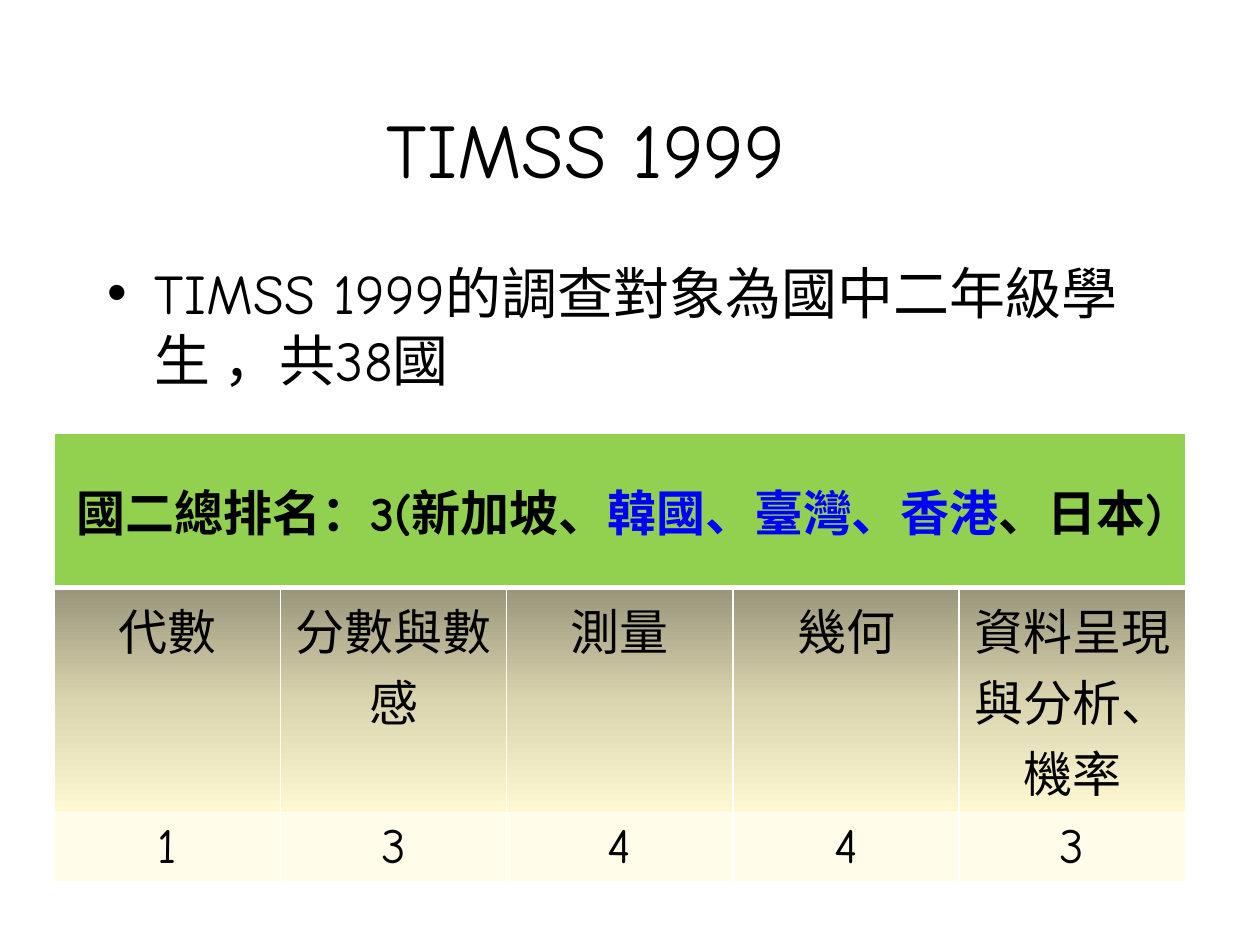
from pptx import Presentation
from pptx.dml.color import RGBColor
from pptx.enum.text import MSO_ANCHOR as Anchor, PP_ALIGN as Align
from pptx.oxml import parse_xml
from pptx.oxml.ns import nsdecls
from pptx.util import Inches, Pt

BLACK = RGBColor(0x00, 0x00, 0x00)
BLUE = RGBColor(0x00, 0x00, 0xFF)
WHITE = RGBColor(0xFF, 0xFF, 0xFF)
GREEN = RGBColor(0x92, 0xD0, 0x50)
CREAM = RGBColor(0xFF, 0xFC, 0xEA)
# Topic row gradient, from top to bottom
TOPIC_STOPS = [
    (0, RGBColor(0x99, 0x95, 0x7B)),
    (50, RGBColor(0xDA, 0xD4, 0xAF)),
    (100, RGBColor(0xFF, 0xF9, 0xD3)),
]

FONT = "Comic Neue"
TITLE = {"size": Pt(44), "name": FONT, "bold": False}
BODY = {"size": Pt(32), "name": FONT, "bold": False}
CELL = {"size": Pt(28), "name": FONT, "bold": False}
HEADER = {**CELL, "bold": True}

RANKING = [("國二總排名：3(新加坡、", BLACK), ("韓國、臺灣、香港", BLUE), ("、日本)", BLACK)]
TOPICS = ["代數", "分數與數感", "測量", "幾何", "資料呈現與分析、機率"]
RANKS = ["1", "3", "4", "4", "3"]


def add_run(p, text, fmt, color=BLACK):
    r = p.add_run()
    r.text = text
    for key, value in fmt.items():
        setattr(r.font, key, value)
    r.font.color.rgb = color


def place(sp, left, top, width, height):
    sp.left, sp.top = Inches(left), Inches(top)
    sp.width, sp.height = Inches(width), Inches(height)


def fill_title(sp, text):
    place(sp, 0.9, 0.44, 7.51, 1.15)
    tf = sp.text_frame
    tf.vertical_anchor = Anchor.BOTTOM
    p = tf.paragraphs[0]
    p.alignment = Align.CENTER
    add_run(p, text, TITLE)


def fill_body(sp, text):
    place(sp, 0.75, 2, 8.42, 4)
    p = sp.text_frame.paragraphs[0]
    pPr = p._p.get_or_add_pPr()
    pPr.set("marL", str(Inches(0.38)))
    pPr.set("indent", str(-Inches(0.38)))
    pPr.append(parse_xml(f'<a:buChar {nsdecls("a")} char="•"/>'))
    p.space_before = Pt(0)
    add_run(p, text, BODY)


def set_borders(cell, bottom=1):
    tcPr = cell._tc.get_or_add_tcPr()
    widths = {"lnL": 1, "lnR": 1, "lnT": 1, "lnB": bottom}
    for i, (tag, width) in enumerate(widths.items()):
        tcPr.insert(i, parse_xml(
            f'<a:{tag} {nsdecls("a")} w="{Pt(width)}"><a:solidFill>'
            f'<a:srgbClr val="{WHITE}"/></a:solidFill></a:{tag}>'))


def set_gradient(cell, stops):
    gs = "".join(f'<a:gs pos="{pos * 1000}"><a:srgbClr val="{color}"/></a:gs>'
                 for pos, color in stops)
    cell._tc.get_or_add_tcPr().append(parse_xml(
        f'<a:gradFill {nsdecls("a")} rotWithShape="1"><a:gsLst>{gs}</a:gsLst>'
        '<a:lin ang="5400000" scaled="0"/></a:gradFill>'))


def set_solid(cell, color):
    cell.fill.solid()
    cell.fill.fore_color.rgb = color


def fill_cell(cell, runs, fmt):
    p = cell.text_frame.paragraphs[0]
    p.alignment = Align.CENTER
    for text, color in runs:
        add_run(p, text, fmt, color)


def add_ranking_table(slide):
    frame = slide.shapes.add_table(3, len(TOPICS), Inches(0.43), Inches(3.44),
                                   Inches(8.98), Inches(2.63))
    table = frame.table
    table.horz_banding = table.first_row = False
    for row in table.rows:
        row.height = Inches(0.41)

    # Overall ranking across the full width
    header = table.cell(0, 0)
    header.merge(table.cell(0, len(TOPICS) - 1))
    header.vertical_anchor = Anchor.MIDDLE
    fill_cell(header, RANKING, HEADER)
    for cell in table.rows[0].cells:
        set_solid(cell, GREEN)
        set_borders(cell, bottom=3)

    # Topics and the rank in each
    for col, (topic, rank) in enumerate(zip(TOPICS, RANKS)):
        top, low = table.cell(1, col), table.cell(2, col)
        fill_cell(top, [(topic, BLACK)], CELL)
        set_gradient(top, TOPIC_STOPS)
        fill_cell(low, [(rank, BLACK)], CELL)
        set_solid(low, CREAM)
        for cell in (top, low):
            set_borders(cell)
    table.cell(2, 0).vertical_anchor = Anchor.MIDDLE


def main():
    prs = Presentation()
    prs.slide_width, prs.slide_height = Inches(10), Inches(7.5)
    slide = prs.slides.add_slide(prs.slide_layouts[1])
    fill_title(slide.shapes.title, "TIMSS 1999")
    fill_body(slide.placeholders[1], "TIMSS 1999的調查對象為國中二年級學生 ，共38國")
    add_ranking_table(slide)
    prs.save("out.pptx")


if __name__ == "__main__":
    main()
